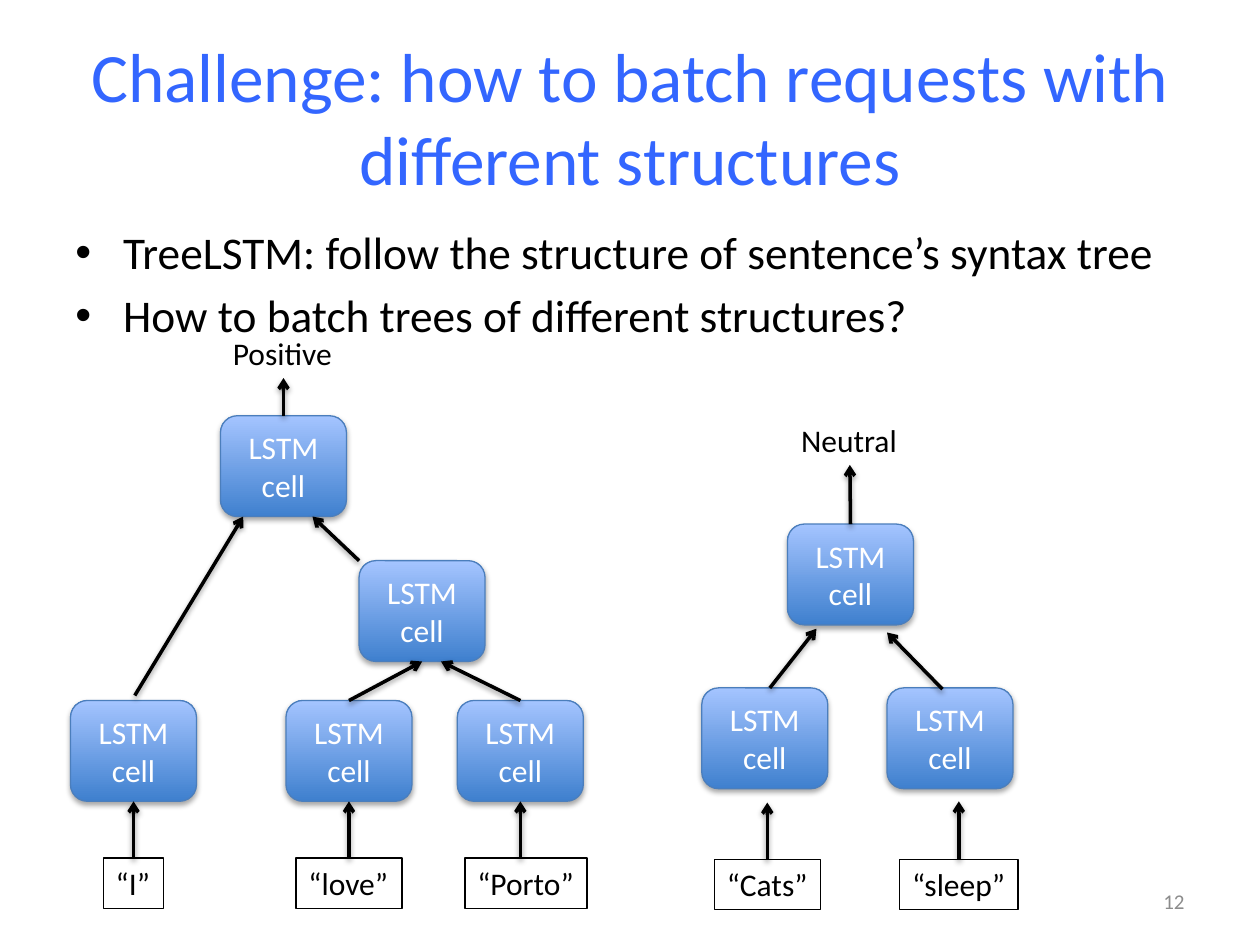
from lxml import etree
from pptx import Presentation
from pptx.dml.color import RGBColor
from pptx.enum import shapes, text
from pptx.oxml import parse_xml
from pptx.oxml.ns import nsdecls, qn
from pptx.util import Inches, Pt

BLACK = RGBColor(0x00, 0x00, 0x00)
WHITE = RGBColor(0xFF, 0xFF, 0xFF)
GRAY = RGBColor(0x8C, 0x8C, 0x8C)
TITLE_BLUE = RGBColor(0x33, 0x66, 0xFF)
CELL_DARK = RGBColor(0x3F, 0x80, 0xCE)
CELL_LIGHT = RGBColor(0xA4, 0xC4, 0xFF)
CELL_EDGE = RGBColor(0x4B, 0x7E, 0xBC)

FONT = "Calibri"
CELL_WIDTH, CELL_HEIGHT = 1, 0.8
WORD_HEIGHT = 0.4
TOP, BOTTOM = 0, 2

SENTENCE_TREE = {
    "label": ("Positive", 1.19, 0, 1),
    "cells": {
        "root": (1.19, 0.7),
        "branch": (2.29, 1.85),
        "first": (0, 2.96),
        "second": (1.71, 2.96),
        "third": (3.07, 2.96),
    },
    "words": {
        "“I”": (0.26, 4.21, 0.48),
        "“love”": (1.79, 4.21, 0.84),
        "“Porto”": (3.13, 4.21, 0.97),
    },
    "arrows": [
        ("root", "label"),
        ((0.51, 2.92), (1.37, 1.5)),
        ((2.29, 1.85), (1.92, 1.5)),
        ("second", "branch"),
        ("third", (2.94, 2.65)),
        ("“I”", "first"),
        ("“love”", "second"),
        ((3.57, 4.21), "third"),
    ],
}

SHORT_TREE = {
    "label": ("Neutral", 0.69, 0, 0.97),
    "cells": {"root": (0.68, 0.87), "first": (0, 2.17), "second": (1.47, 2.17)},
    "words": {"“Cats”": (0.1, 3.53, 0.84), "“sleep”": (1.57, 3.53, 0.94)},
    "arrows": [
        ("root", "label"),
        ((0.54, 2.17), (0.91, 1.7)),
        ((1.91, 2.18), (1.47, 1.73)),
        ("“Cats”", (0.52, 3.08)),
        ("“sleep”", (2.04, 3.07)),
    ],
}


def write_text(shape, lines, size=18, color=BLACK, align=text.PP_ALIGN.LEFT,
               anchor=text.MSO_ANCHOR.TOP, wrap=True, bullet=False):
    frame = shape.text_frame
    frame.word_wrap = wrap
    frame.vertical_anchor = anchor
    for index, line in enumerate(lines):
        paragraph = frame.paragraphs[0] if index == 0 else frame.add_paragraph()
        paragraph.alignment = align
        run = paragraph.add_run()
        run.text = line
        run.font.name = FONT
        run.font.size = Pt(size)
        run.font.color.rgb = color
        if bullet:
            paragraph.space_before = Pt(5)
            properties = paragraph._p.get_or_add_pPr()
            properties.set("marL", str(Inches(0.38)))
            properties.set("indent", str(Inches(-0.38)))
            etree.SubElement(properties, qn("a:buFont"), typeface="Arial")
            etree.SubElement(properties, qn("a:buChar"), char="•")


def add_text(slide, lines, left, top, width, height, **style):
    box = slide.shapes.add_textbox(
        Inches(left), Inches(top), Inches(width), Inches(height))
    write_text(box, lines, **style)
    return box


def add_shadow(properties, distance, opacity):
    for effects in properties.findall(qn("a:effectLst")):
        properties.remove(effects)
    properties.append(parse_xml(
        f'<a:effectLst {nsdecls("a")}><a:outerShdw blurRad="40000" '
        f'dist="{distance}" dir="5400000" rotWithShape="0">'
        f'<a:srgbClr val="000000"><a:alpha val="{opacity}"/></a:srgbClr>'
        '</a:outerShdw></a:effectLst>'))


def add_cell(slide, left, top):
    cell = slide.shapes.add_shape(
        shapes.MSO_SHAPE.ROUNDED_RECTANGLE,
        Inches(left), Inches(top), Inches(CELL_WIDTH), Inches(CELL_HEIGHT))
    cell.fill.gradient()
    cell.fill.gradient_angle = 90
    for stop, color in zip(cell.fill.gradient_stops, (CELL_DARK, CELL_LIGHT)):
        stop.color.rgb = color
    stops = cell.fill.gradient_stops
    stops[0].position, stops[1].position = 0, 1
    cell.line.color.rgb = CELL_EDGE
    cell.line.width = Pt(0.75)
    add_shadow(cell._element.spPr, 23000, 35000)
    write_text(cell, ["LSTM", "cell"], color=WHITE,
               align=text.PP_ALIGN.CENTER, anchor=text.MSO_ANCHOR.MIDDLE)
    return cell


def add_word(slide, word, left, top, width):
    box = add_text(slide, [word], left, top, width, WORD_HEIGHT, wrap=False)
    box.line.color.rgb = BLACK
    box.line.width = Pt(0.75)
    return box


def add_arrow(slide, left, top, nodes, start, end):
    def locate(place):
        x, y = (0, 0) if place in nodes else place
        return Inches(left + x), Inches(top + y)

    arrow = slide.shapes.add_connector(
        shapes.MSO_CONNECTOR.STRAIGHT, *locate(start), *locate(end))
    if start in nodes:
        arrow.begin_connect(nodes[start], TOP)
    if end in nodes:
        arrow.end_connect(nodes[end], BOTTOM)
    arrow.line.color.rgb = BLACK
    arrow.line.width = Pt(2)
    etree.SubElement(arrow.line._get_or_add_ln(), qn("a:tailEnd"), type="arrow")
    add_shadow(arrow._element.spPr, 20000, 38000)


def add_tree(slide, left, top, tree):
    label, x, y, width = tree["label"]
    nodes = {"label": add_text(slide, [label], left + x, top + y,
                               width, WORD_HEIGHT, wrap=False)}
    for name, (x, y) in tree["cells"].items():
        nodes[name] = add_cell(slide, left + x, top + y)
    for word, (x, y, width) in tree["words"].items():
        nodes[word] = add_word(slide, word, left + x, top + y, width)
    for start, end in tree["arrows"]:
        add_arrow(slide, left, top, nodes, start, end)


def add_heading(slide, left, top, width):
    add_text(slide, ["Challenge: how to batch requests with different structures"],
             left, top, width, 1.25, size=39.6, color=TITLE_BLUE,
             align=text.PP_ALIGN.CENTER, anchor=text.MSO_ANCHOR.MIDDLE)
    add_text(slide, ["TreeLSTM: follow the structure of sentence’s syntax tree",
                     "How to batch trees of different structures?"],
             left, top + 1.43, width, 0.99, size=25.9, bullet=True)


def main():
    presentation = Presentation()
    presentation.slide_width = Inches(10)
    presentation.slide_height = Inches(7.5)
    slide = presentation.slides.add_slide(presentation.slide_layouts[6])
    add_heading(slide, 0.5, 0.3, 9)
    add_tree(slide, 0.56, 2.6, SENTENCE_TREE)
    add_tree(slide, 5.57, 3.29, SHORT_TREE)
    add_text(slide, ["12"], 7.17, 6.95, 2.33, 0.4, size=12, color=GRAY,
             align=text.PP_ALIGN.RIGHT, anchor=text.MSO_ANCHOR.MIDDLE)
    presentation.save("out.pptx")


if __name__ == "__main__":
    main()
